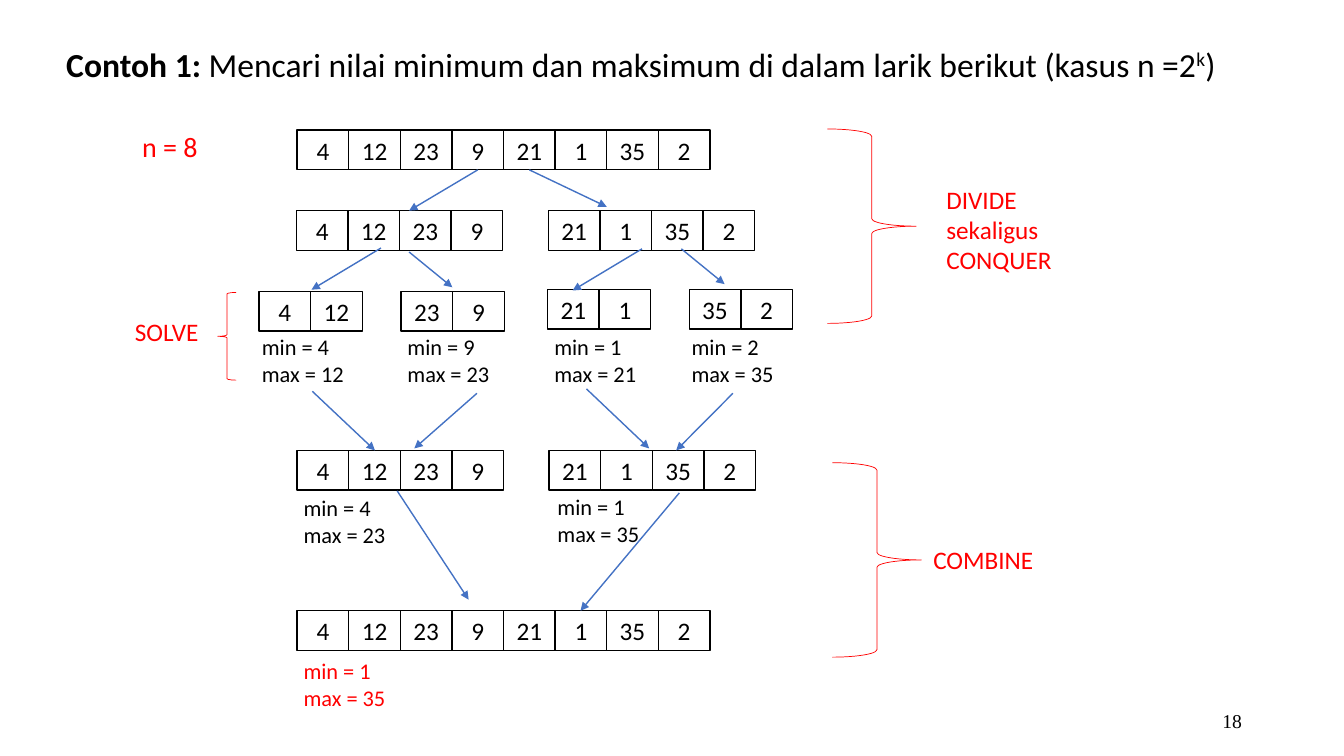
from dataclasses import dataclass

from lxml.etree import SubElement
from pptx import Presentation
from pptx.dml.color import RGBColor
from pptx.enum.shapes import MSO_CONNECTOR, MSO_SHAPE
from pptx.enum.text import MSO_ANCHOR, MSO_AUTO_SIZE, PP_ALIGN
from pptx.oxml.ns import qn
from pptx.slide import Slide
from pptx.util import Cm, Pt

BLACK, RED, BLUE = "000000", "FF0000", "4472C4"
NUMBERS = [4, 12, 23, 9, 21, 1, 35, 2]
CELL_WIDTH, CELL_HEIGHT = 1.3, 1.0


@dataclass
class Run:
    text: str
    bold: bool = False
    baseline: int = 0


@dataclass
class Label:
    left: float
    top: float
    width: float
    height: float
    lines: list[list[Run]]
    size: float = 18
    color: str = RED
    font: str = "Calibri"


@dataclass
class Part:
    left: float
    top: float
    start: int
    stop: int


@dataclass
class Summary(Part):
    color: str = BLACK


@dataclass
class Arrow:
    from_x: float
    from_y: float
    to_x: float
    to_y: float


@dataclass
class Brace:
    kind: MSO_SHAPE
    left: float
    top: float
    width: float
    height: float


PARTS = [
    Part(7.49, 3.28, 0, 8),
    Part(7.47, 5.31, 0, 4), Part(13.82, 5.31, 4, 8),
    Part(6.53, 7.34, 0, 2), Part(10.11, 7.34, 2, 4),
    Part(13.8, 7.29, 4, 6), Part(17.37, 7.29, 6, 8),
    Part(7.49, 11.35, 0, 4), Part(13.84, 11.35, 4, 8),
    Part(7.49, 15.39, 0, 8),
]
SUMMARIES = [
    Summary(6.35, 8.28, 0, 2), Summary(10.02, 8.28, 2, 4),
    Summary(13.72, 8.28, 4, 6), Summary(17.18, 8.28, 6, 8),
    Summary(7.4, 12.33, 0, 4), Summary(13.8, 12.31, 4, 8),
    Summary(7.4, 16.44, 0, 8, RED),
]
ARROWS = [
    Arrow(12.04, 4.28, 10.31, 5.31), Arrow(13.34, 4.28, 15.29, 5.21),
    Arrow(9.6, 6.25, 7.85, 7.3), Arrow(10.31, 6.35, 11.4, 7.24),
    Arrow(16.18, 6.27, 14.43, 7.32), Arrow(17.17, 6.27, 18.26, 7.16),
    Arrow(7.87, 9.86, 9.45, 11.35), Arrow(12.02, 9.91, 10.44, 11.3),
    Arrow(14.78, 9.8, 16.36, 11.3), Arrow(18.47, 9.91, 17.04, 11.35),
    Arrow(10.01, 12.37, 11.81, 15.11), Arrow(17.12, 12.42, 14.63, 15.39),
]
BRACES = [
    Brace(MSO_SHAPE.RIGHT_BRACE, 20.98, 11.66, 2.24, 4.9),
    Brace(MSO_SHAPE.RIGHT_BRACE, 20.85, 3.25, 2.24, 4.9),
    Brace(MSO_SHAPE.LEFT_BRACE, 5.49, 7.37, 0.46, 2.21),
]
TITLE = [
    Run("Contoh 1: ", bold=True),
    Run("Mencari nilai minimum dan maksimum di dalam larik berikut (kasus n =2"),
    Run("k", baseline=30000),
    Run(")"),
]
LABELS = [
    Label(1.42, 0.97, 29.62, 1.27, [TITLE], 24, BLACK),
    Label(3.33, 3.15, 1.93, 1.12, [[Run("n = 8")]], 20),
    Label(3.15, 7.85, 2.13, 1.02, [[Run("SOLVE")]]),
    Label(23.27, 13.59, 3.05, 1.02, [[Run("COMBINE")]]),
    Label(23.6, 4.52, 3.2, 2.57, [[Run("DIVIDE")], [Run("sekaligus")], [Run("CONQUER")]]),
]
PAGE_NUMBER = Label(23.93, 17.65, 7.62, 1.02, [[Run("18")]], 14, BLACK, "Times New Roman")


def rgb(color: str) -> RGBColor:
    return RGBColor.from_string(color)


def write_lines(frame, label: Label, alignment: PP_ALIGN) -> None:
    for index, line in enumerate(label.lines):
        paragraph = frame.add_paragraph() if index else frame.paragraphs[0]
        paragraph.alignment = alignment
        for part in line:
            run = paragraph.add_run()
            run.text = part.text
            run.font.name = label.font
            run.font.size = Pt(label.size)
            run.font.bold = part.bold
            run.font.color.rgb = rgb(label.color)
            if part.baseline:
                run._r.get_or_add_rPr().set("baseline", str(part.baseline))


def add_label(slide: Slide, label: Label) -> None:
    shape = slide.shapes.add_textbox(
        Cm(label.left), Cm(label.top), Cm(label.width), Cm(label.height))
    shape.text_frame.word_wrap = False
    shape.text_frame.auto_size = MSO_AUTO_SIZE.SHAPE_TO_FIT_TEXT
    write_lines(shape.text_frame, label, PP_ALIGN.LEFT)


def add_page_number(slide: Slide, label: Label) -> None:
    shape = slide.shapes.add_textbox(
        Cm(label.left), Cm(label.top), Cm(label.width), Cm(label.height))
    shape.text_frame.word_wrap = True
    shape.text_frame.vertical_anchor = MSO_ANCHOR.MIDDLE
    write_lines(shape.text_frame, label, PP_ALIGN.RIGHT)


def add_outline(slide: Slide, outline: Brace | Label, kind: MSO_SHAPE, color: str, weight: float):
    shape = slide.shapes.add_shape(
        kind, Cm(outline.left), Cm(outline.top), Cm(outline.width), Cm(outline.height))
    shape.shadow.inherit = False
    shape.fill.background()
    shape.line.color.rgb = rgb(color)
    shape.line.width = Pt(weight)
    return shape


def add_part(slide: Slide, part: Part) -> None:
    for column, number in enumerate(NUMBERS[part.start:part.stop]):
        cell = Label(part.left + column * CELL_WIDTH, part.top, CELL_WIDTH, CELL_HEIGHT,
                     [[Run(str(number))]], color=BLACK)
        shape = add_outline(slide, cell, MSO_SHAPE.RECTANGLE, BLACK, 1)
        shape.text_frame.vertical_anchor = MSO_ANCHOR.MIDDLE
        write_lines(shape.text_frame, cell, PP_ALIGN.CENTER)


def add_summary(slide: Slide, summary: Summary) -> None:
    numbers = NUMBERS[summary.start:summary.stop]
    lines = [[Run(f"min = {min(numbers)}")], [Run(f"max = {max(numbers)}")]]
    add_label(slide, Label(summary.left, summary.top, 2.59, 1.63, lines, 16, summary.color))


def add_arrow(slide: Slide, arrow: Arrow) -> None:
    connector = slide.shapes.add_connector(
        MSO_CONNECTOR.STRAIGHT,
        Cm(arrow.from_x), Cm(arrow.from_y), Cm(arrow.to_x), Cm(arrow.to_y))
    connector.line.color.rgb = rgb(BLUE)
    connector.line.width = Pt(1)
    SubElement(connector.line._get_or_add_ln(), qn("a:tailEnd"), type="triangle")
    SubElement(connector._element.spPr, qn("a:effectLst"))


def main() -> None:
    presentation = Presentation()
    presentation.slide_width = Cm(33.87)
    presentation.slide_height = Cm(19.05)
    slide = presentation.slides.add_slide(presentation.slide_layouts[6])
    for part in PARTS:
        add_part(slide, part)
    for summary in SUMMARIES:
        add_summary(slide, summary)
    for arrow in ARROWS:
        add_arrow(slide, arrow)
    for brace in BRACES:
        add_outline(slide, brace, brace.kind, RED, 0.5)
    for label in LABELS:
        add_label(slide, label)
    add_page_number(slide, PAGE_NUMBER)
    presentation.save("out.pptx")


if __name__ == "__main__":
    main()
